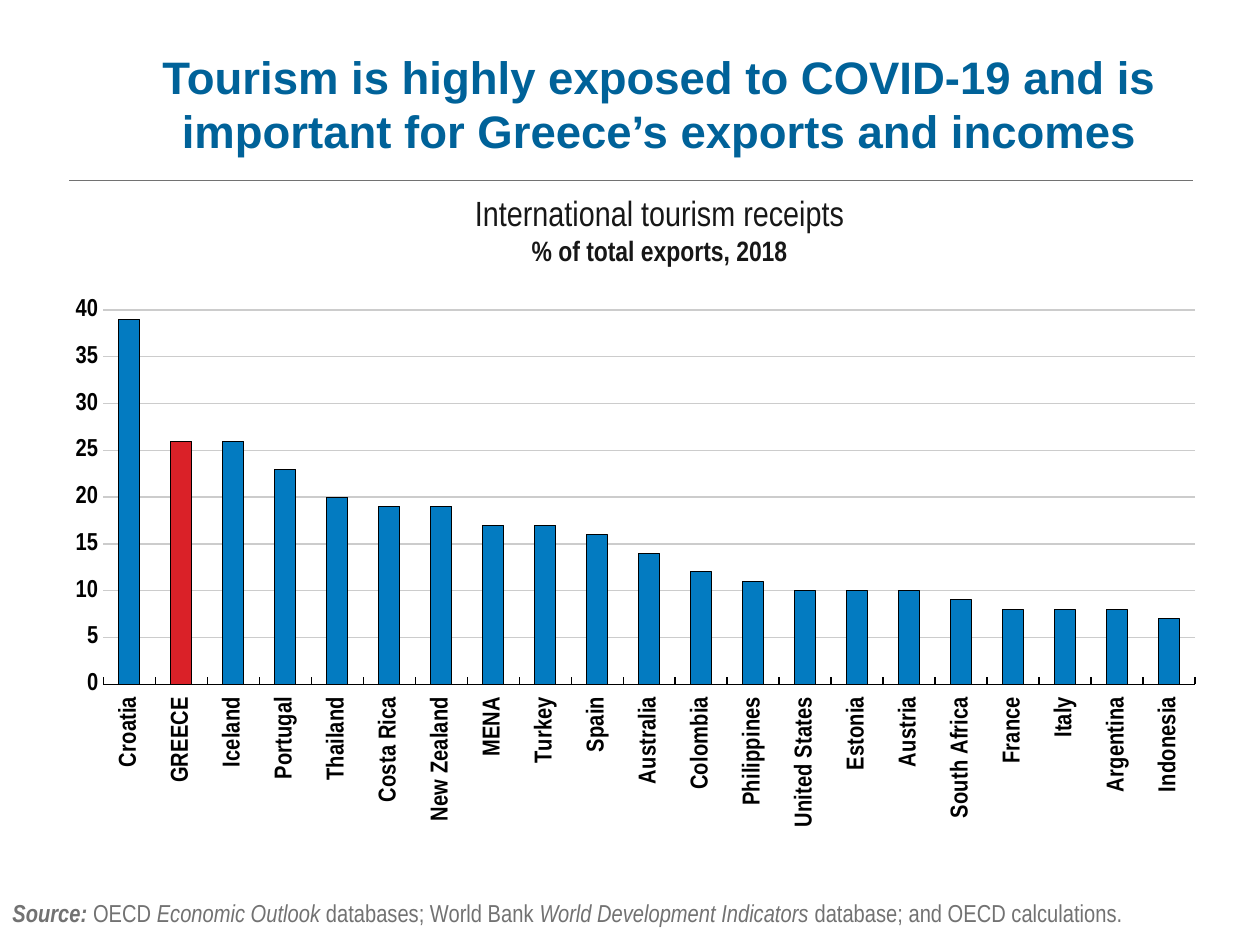
from lxml.etree import SubElement
from pptx import Presentation
from pptx.chart.data import CategoryChartData
from pptx.dml.color import RGBColor
from pptx.enum.chart import XL_CHART_TYPE, XL_TICK_LABEL_POSITION, XL_TICK_MARK
from pptx.enum.shapes import MSO_CONNECTOR
from pptx.enum.text import MSO_ANCHOR, MSO_AUTO_SIZE, PP_ALIGN
from pptx.oxml.ns import qn
from pptx.util import Inches, Pt

BLUE, RED, TITLE_BLUE = "037BC1", "DA2128", "006299"
BLACK, WHITE, DARK, GREY, GRID = "000000", "FFFFFF", "171717", "727272", "CCCCCC"
NARROW = "Arial Narrow"
RECEIPTS = {
    "Croatia": 39, "GREECE": 26, "Iceland": 26, "Portugal": 23, "Thailand": 20,
    "Costa Rica": 19, "New Zealand": 19, "MENA": 17, "Turkey": 17, "Spain": 16,
    "Australia": 14, "Colombia": 12, "Philippines": 11, "United States": 10,
    "Estonia": 10, "Austria": 10, "South Africa": 9, "France": 8, "Italy": 8,
    "Argentina": 8, "Indonesia": 7,
}
SOURCE = [
    ("Source: ", {"bold": True, "italic": True}),
    ("OECD ", {}),
    ("Economic Outlook ", {"italic": True}),
    ("databases; World Bank ", {}),
    ("World Development Indicators ", {"italic": True}),
    ("database; and OECD calculations.", {}),
]


def color(value):
    return RGBColor.from_string(value)


class SlideBuilder:
    """Holds the style and the current slide, and adds each kind of element."""

    def __init__(self, presentation):
        self.slide = presentation.slides.add_slide(presentation.slide_layouts[5])

    def style_font(self, font, values):
        for name, value in values.items():
            if name == "color":
                font.color.rgb = color(value)
            else:
                setattr(font, name, value)

    def style_line(self, line, value, width):
        line.color.rgb = color(value)
        line.width = Pt(width)

    def add_title(self, text, box, values):
        title = self.slide.shapes.title
        title.left, title.top, title.width, title.height = map(Inches, box)
        frame = title.text_frame
        frame.text = text
        frame.word_wrap = True
        frame.auto_size = MSO_AUTO_SIZE.NONE
        frame.vertical_anchor = MSO_ANCHOR.MIDDLE
        paragraph = frame.paragraphs[0]
        paragraph.alignment = PP_ALIGN.CENTER
        self.style_font(paragraph.runs[0].font, values)

    def add_text(self, paragraphs, box, values, alignment=PP_ALIGN.LEFT, wrap=True):
        frame = self.slide.shapes.add_textbox(*map(Inches, box)).text_frame
        frame.word_wrap = wrap
        frame.auto_size = MSO_AUTO_SIZE.SHAPE_TO_FIT_TEXT
        for index, runs in enumerate(paragraphs):
            paragraph = frame.add_paragraph() if index else frame.paragraphs[0]
            paragraph.alignment = alignment
            for text, changes in runs:
                run = paragraph.add_run()
                run.text = text
                self.style_font(run.font, values | changes)

    def add_rule(self, left, top, width):
        ends = map(Inches, (left, top, left + width, top))
        rule = self.slide.shapes.add_connector(MSO_CONNECTOR.STRAIGHT, *ends)
        self.style_line(rule.line, GREY, 0.5)
        SubElement(rule._element.spPr, qn("a:effectLst"))

    def add_column_chart(self, values, highlight, box, font):
        data = CategoryChartData()
        data.categories = list(values)
        data.add_series("Series 1", list(values.values()))
        chart = self.slide.shapes.add_chart(
            XL_CHART_TYPE.COLUMN_CLUSTERED, *map(Inches, box), data
        ).chart
        chart.has_legend = chart.has_title = False
        self.style_font(chart.font, font)
        self.style_axes(chart)
        self.style_plot_area(chart)

        plot = chart.plots[0]
        plot.gap_width = 150
        plot.vary_by_categories = False
        series = plot.series[0]
        point = series.points[list(values).index(highlight)]
        for bar, fill in ((series, BLUE), (point, RED)):
            bar.format.fill.solid()
            bar.format.fill.fore_color.rgb = color(fill)
            self.style_line(bar.format.line, BLACK, 0.5)

    def style_axes(self, chart):
        category, value = chart.category_axis, chart.value_axis
        for axis in (category, value):
            axis.major_tick_mark = XL_TICK_MARK.INSIDE
            axis.minor_tick_mark = XL_TICK_MARK.NONE
        category.tick_label_position = XL_TICK_LABEL_POSITION.LOW
        self.style_line(category.format.line, BLACK, 0.75)
        self.style_font(category.tick_labels.font, {"size": Pt(14), "bold": True})
        body = category._element.find(qn("c:txPr")).find(qn("a:bodyPr"))
        body.set("rot", "-5400000")
        body.set("vert", "horz")
        value.minimum_scale, value.maximum_scale, value.major_unit = 0, 40, 5
        value.format.line.fill.background()
        self.style_line(value.major_gridlines.format.line, GRID, 0.75)

    def style_plot_area(self, chart):
        area = chart._chartSpace.chart.plotArea
        for old in area.findall(qn("c:layout")):
            area.remove(old)
        layout = SubElement(area, qn("c:layout"))
        area.insert(0, layout)
        manual = SubElement(layout, qn("c:manualLayout"))
        settings = {
            "layoutTarget": "outer", "xMode": "edge", "yMode": "edge",
            "x": "0.01", "y": "0.02", "w": "0.99", "h": "0.97",
        }
        for name, setting in settings.items():
            SubElement(manual, qn(f"c:{name}")).set("val", setting)
        properties = SubElement(area, qn("c:spPr"))
        fill = SubElement(properties, qn("a:solidFill"))
        SubElement(fill, qn("a:srgbClr")).set("val", WHITE)


def main():
    presentation = Presentation()
    presentation.slide_width, presentation.slide_height = Inches(10), Inches(7.5)
    builder = SlideBuilder(presentation)
    builder.add_rule(0.55, 1.43, 8.92)
    builder.add_title(
        "Tourism is highly exposed to COVID-19 and is important for Greece’s exports and incomes",
        (1.18, 0.26, 8.11, 1.12),
        {"name": "Arial", "size": Pt(26), "bold": True, "color": TITLE_BLUE},
    )
    builder.add_text(
        [SOURCE],
        (0, 7.08, 9.29, 0.54),
        {"name": NARROW, "size": Pt(14), "bold": False, "italic": False, "color": GREY},
    )
    builder.add_text(
        [
            [("International tourism receipts", {})],
            [("% of total exports, 2018", {"size": Pt(16), "bold": True})],
        ],
        (3.66, 1.47, 3.15, 0.71),
        {"name": NARROW, "size": Pt(20), "color": DARK},
        alignment=PP_ALIGN.CENTER,
        wrap=False,
    )
    builder.add_column_chart(
        RECEIPTS,
        "GREECE",
        (0.51, 2.28, 8.98, 4.33),
        {"name": NARROW, "size": Pt(14), "bold": True, "color": BLACK},
    )
    presentation.save("out.pptx")


if __name__ == "__main__":
    main()
